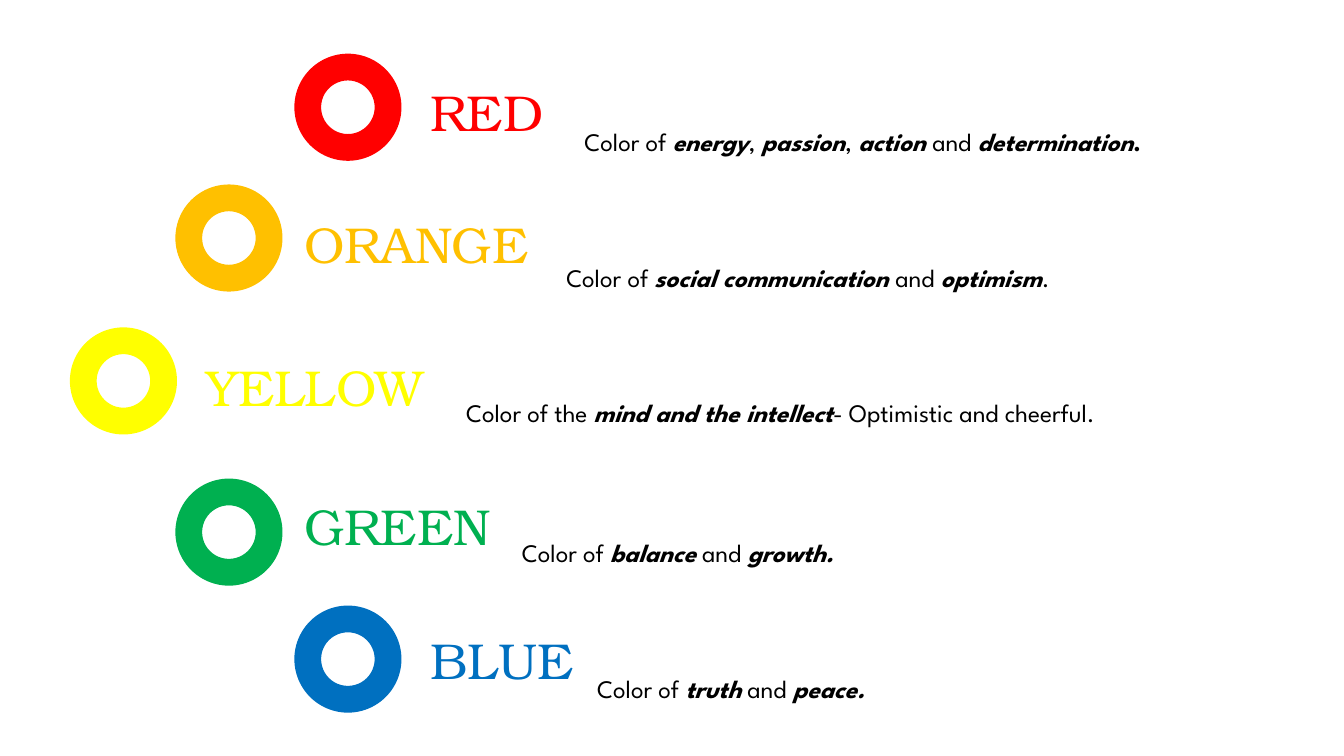
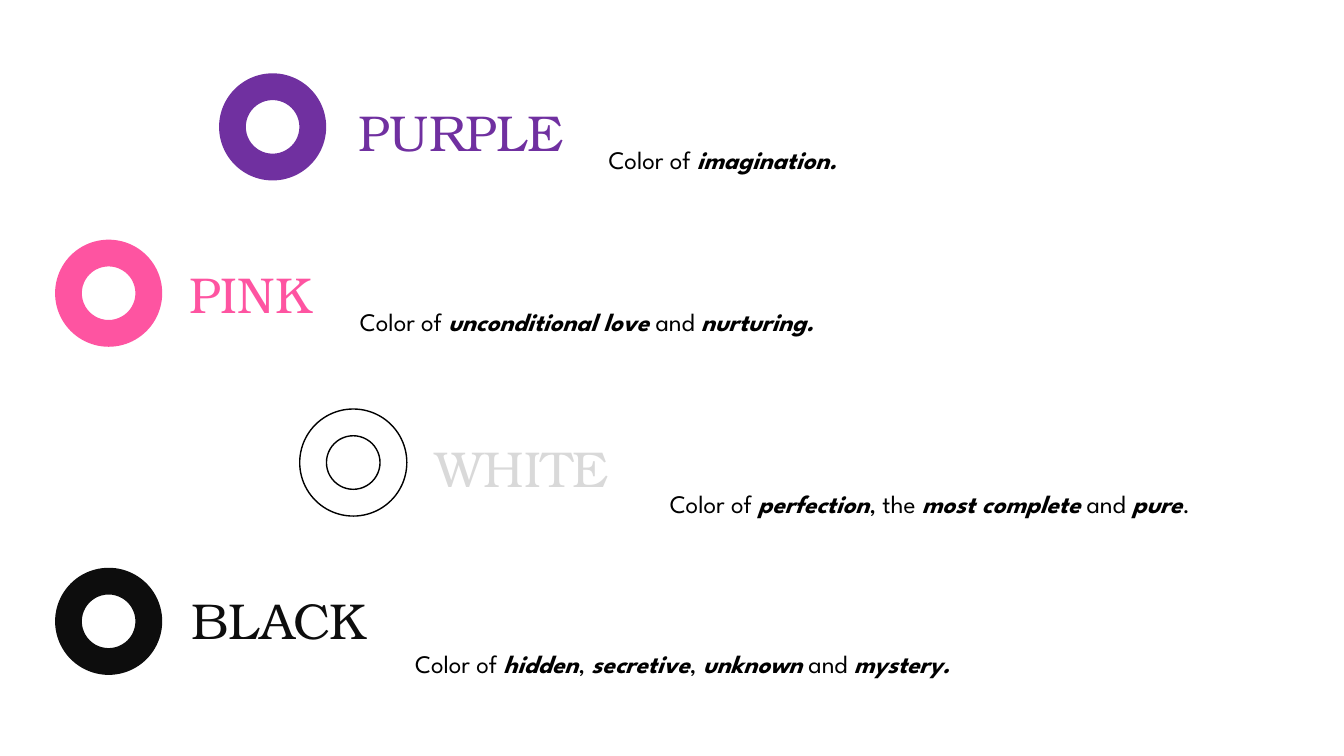
from dataclasses import dataclass

from pptx import Presentation
from pptx.dml.color import RGBColor
from pptx.enum.shapes import MSO_SHAPE as Shape
from pptx.enum.text import MSO_AUTO_SIZE as AutoSize
from pptx.util import Inches, Pt


@dataclass(frozen=True)
class Theme:
    name_font: str = "TeX Gyre Bonum"
    meaning_font: str = "League Spartan"
    name_size: int = 36
    meaning_size: int = 18
    outline_width: int = 1
    ink: str = "000000"
    paper: str = "FFFFFF"
    red: str = "FF0000"
    orange: str = "FFC000"
    yellow: str = "FFFF00"
    green: str = "00B050"
    blue: str = "0070C0"
    purple: str = "7030A0"
    pink: str = "FE54A1"
    pale_grey: str = "D9D9D9"
    black: str = "0D0D0D"


@dataclass(frozen=True)
class ColorEntry:
    name: str
    color: str
    ring: tuple
    label: tuple
    label_width: float
    meaning_top: float
    meaning_width: float
    meaning: str
    gap: float = 0
    ring_fill: str = ""
    ring_line: str = ""


THEME = Theme()
SLIDE_WIDTH = Inches(13.333)
SLIDE_HEIGHT = Inches(7.5)
RING_HEIGHT = 14.17
LABEL_HEIGHT = 9.47
MEANING_HEIGHT = 5.33
EMPHASIS = {"*": (True, True), "+": (True, False)}

SLIDES = [
    [
        ColorEntry("RED", THEME.red, (21.9, 7.1), (31.3, 10.1), 11.25, 16, 49.35,
                   "Color of |*energy|, |*passion|, |*action |and |*determination|+.", gap=0.2),
        ColorEntry("ORANGE", THEME.orange, (13.05, 24.4), (21.9, 27.5), 19.5, 34.1, 43.5,
                   "Color of |*social communication |and |*optimism|."),
        ColorEntry("YELLOW", THEME.yellow, (5.2, 43.3), (14.6, 46.5), 19.35, 51.9, 56.85,
                   "Color of the |*mind and the intellect|- Optimistic and cheerful."),
        ColorEntry("GREEN", THEME.green, (13.05, 63.3), (21.9, 64.8), 16.2, 70.4, 29.55,
                   "Color of |*balance| and |*growth."),
        ColorEntry("BLUE", THEME.blue, (21.9, 80.1), (31.3, 82.5), 12.4, 88.4, 25.65,
                   "Color of |*truth| and |*peace."),
    ],
    [
        ColorEntry("PURPLE", THEME.purple, (16.3, 9.7), (25.95, 12.7), 18.6, 18.4, 23.7,
                   "Color of |*imagination."),
        ColorEntry("PINK", THEME.pink, (4.1, 31.7), (13.35, 34.1), 12.7, 39.9, 40.4,
                   "Color of |*unconditional love |and |*nurturing."),
        ColorEntry("WHITE", THEME.pale_grey, (22.3, 54.1), (31.65, 57.1), 16.05, 63.9, 47,
                   "Color of |*perfection|, the |*most complete| and |*pure|.",
                   gap=1.4, ring_fill=THEME.paper, ring_line=THEME.ink),
        ColorEntry("BLACK", THEME.black, (4.1, 75.1), (13.5, 77.3), 16.05, 85.1, 47.55,
                   "Color of |*hidden|, |*secretive|, |*unknown| and |*mystery.", gap=0.6),
    ],
]


def across(percent):
    return round(SLIDE_WIDTH * percent / 100)


def down(percent):
    return round(SLIDE_HEIGHT * percent / 100)


def add_ring(slide, entry):
    left, top = entry.ring
    diameter = down(RING_HEIGHT)
    ring = slide.shapes.add_shape(Shape.DONUT, across(left), down(top), diameter, diameter)
    ring.shadow.inherit = False
    ring.fill.solid()
    ring.fill.fore_color.rgb = RGBColor.from_string(entry.ring_fill or entry.color)
    if entry.ring_line:
        ring.line.color.rgb = RGBColor.from_string(entry.ring_line)
        ring.line.width = Pt(THEME.outline_width)
    else:
        ring.line.fill.background()


def add_text(slide, text, *, left, top, width, height, font, size, color):
    box = slide.shapes.add_textbox(across(left), down(top), across(width), down(height))
    frame = box.text_frame
    frame.word_wrap = True
    frame.auto_size = AutoSize.SHAPE_TO_FIT_TEXT
    paragraph = frame.paragraphs[0]
    for part in text.split("|"):
        run = paragraph.add_run()
        run.text = part.lstrip("*+")
        run.font.bold, run.font.italic = EMPHASIS.get(part[0], (False, False))
        run.font.name = font
        run.font.size = Pt(size)
        run.font.color.rgb = RGBColor.from_string(color)


def add_color_entry(slide, entry):
    add_ring(slide, entry)
    left, top = entry.label
    add_text(slide, entry.name, left=left, top=top, width=entry.label_width,
             height=LABEL_HEIGHT, font=THEME.name_font, size=THEME.name_size,
             color=entry.color)
    add_text(slide, entry.meaning, left=left + entry.label_width + entry.gap,
             top=entry.meaning_top, width=entry.meaning_width, height=MEANING_HEIGHT,
             font=THEME.meaning_font, size=THEME.meaning_size, color=THEME.ink)


def main():
    presentation = Presentation()
    presentation.slide_width = SLIDE_WIDTH
    presentation.slide_height = SLIDE_HEIGHT
    blank_layout = presentation.slide_layouts[6]
    for entries in SLIDES:
        slide = presentation.slides.add_slide(blank_layout)
        for entry in entries:
            add_color_entry(slide, entry)
    presentation.save("out.pptx")


if __name__ == "__main__":
    main()
